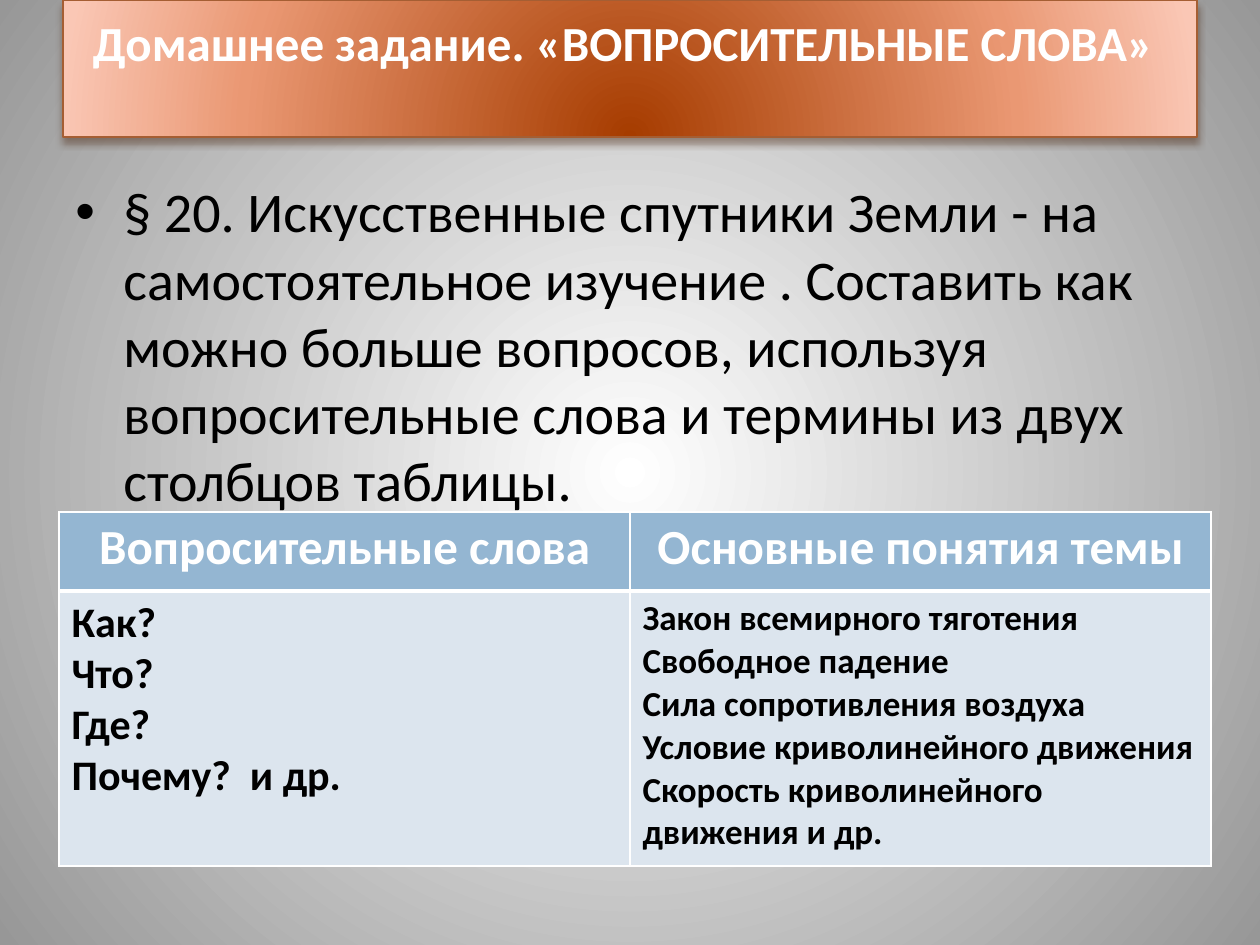
from lxml.etree import SubElement
from pptx import Presentation
from pptx.dml.color import RGBColor
from pptx.enum.shapes import MSO_SHAPE
from pptx.enum.text import MSO_ANCHOR, PP_ALIGN
from pptx.oxml import parse_xml
from pptx.oxml.ns import nsdecls, qn
from pptx.util import Emu, Pt

WHITE = RGBColor(0xFF, 0xFF, 0xFF)
BLACK = RGBColor(0x00, 0x00, 0x00)
GRAY = RGBColor(0x97, 0x97, 0x97)
RUST = RGBColor(0xA6, 0x3C, 0x00)
ORANGE = RGBColor(0xEA, 0x98, 0x73)
PEACH = RGBColor(0xFA, 0xC7, 0xB5)
BROWN = RGBColor(0xA5, 0x5E, 0x33)
SHADE = RGBColor(0x4F, 0x2D, 0x18)
BLUE = RGBColor(0x94, 0xB6, 0xD2)
PALE_BLUE = RGBColor(0xDC, 0xE5, 0xEE)

HEADING = {"size": Pt(28), "bold": True, "color": WHITE}
TASK = {"size": Pt(32), "bold": False, "color": BLACK}
QUESTIONS = {"size": Pt(24), "bold": True, "color": BLACK}
CONCEPTS = {"size": Pt(20), "bold": True, "color": BLACK}

COLUMNS = [
    ("Вопросительные слова", QUESTIONS,
     ["Как?", "Что?", "Где?", "Почему?  и др."]),
    ("Основные понятия темы", CONCEPTS,
     ["Закон всемирного тяготения", "Свободное падение",
      "Сила сопротивления воздуха", "Условие криволинейного движения",
      "Скорость криволинейного движения и др."]),
]


def px(length):
    """Turn slide pixels into EMU."""
    return Emu(round(length * 914400 / 126))


def set_attributes(target, values):
    """Set every attribute named in a dict."""
    for name, value in values.items():
        setattr(target, name, value)


def write_lines(frame, lines, style, align=PP_ALIGN.LEFT):
    """Fill a text frame with one styled paragraph per line."""
    for index, line in enumerate(lines):
        paragraph = frame.add_paragraph() if index else frame.paragraphs[0]
        paragraph.alignment = align
        run = paragraph.add_run()
        run.text = line
        set_attributes(run.font, {"name": "Calibri", "size": style["size"],
                                  "bold": style["bold"]})
        run.font.color.rgb = style["color"]


def fill_radial(fill, holder, stops, focus):
    """Give a holder element a circular gradient around a focus rectangle."""
    fill.solid()
    marks = "".join(
        f'<a:gs pos="{position * 1000}"><a:srgbClr val="{color}"/></a:gs>'
        for position, color in stops)
    sides = " ".join(f'{side}="{value * 1000}"' for side, value in zip("ltrb", focus))
    gradient = parse_xml(
        f'<a:gradFill {nsdecls("a")} rotWithShape="1"><a:gsLst>{marks}</a:gsLst>'
        f'<a:path path="circle"><a:fillToRect {sides}/></a:path></a:gradFill>')
    holder.replace(holder.find(qn("a:solidFill")), gradient)


def paint_background(slide):
    """Paint the white to gray glow behind the slide."""
    fill = slide.background.fill
    fill.solid()
    holder = next(slide.element.iter(qn("p:bgPr")))
    fill_radial(fill, holder, [(0, WHITE), (100, GRAY)], (50, 50, 50, 50))


def add_banner(slide, left, top, width, height):
    """Add the heading banner with its gradient and soft shadow."""
    banner = slide.shapes.add_shape(
        MSO_SHAPE.RECTANGLE, px(left), px(top), px(width), px(height))
    properties = banner.element.spPr
    fill_radial(banner.fill, properties, [(0, RUST), (68, ORANGE), (100, PEACH)],
                (50, 130, 50, -30))
    banner.line.color.rgb = BROWN
    banner.line.width = Pt(0.75)
    banner.shadow.inherit = False
    shadow = SubElement(properties.find(qn("a:effectLst")), qn("a:outerShdw"),
                        blurRad=str(Pt(4.5)), dist=str(Pt(3)),
                        dir="5400000", rotWithShape="0")
    color = SubElement(shadow, qn("a:srgbClr"), val=str(SHADE))
    SubElement(color, qn("a:alpha"), val="48000")
    frame = banner.text_frame
    set_attributes(frame, {"word_wrap": True, "vertical_anchor": MSO_ANCHOR.TOP,
                           "margin_left": px(6), "margin_right": px(20),
                           "margin_top": px(13)})
    write_lines(frame, ["Домашнее задание. «ВОПРОСИТЕЛЬНЫЕ СЛОВА»"],
                HEADING, PP_ALIGN.CENTER)


def add_task(slide, left, top, width, height):
    """Add the bulleted homework task."""
    task = slide.shapes.add_textbox(px(left), px(top), px(width), px(height))
    frame = task.text_frame
    set_attributes(frame, {"word_wrap": True, "margin_top": px(9)})
    write_lines(frame, [
        "§ 20. Искусственные спутники Земли - на самостоятельное изучение . "
        "Составить как можно больше вопросов, используя вопросительные слова "
        "и термины из двух столбцов таблицы."], TASK)
    layout = frame.paragraphs[0]._p.get_or_add_pPr()
    layout.set("marL", str(px(48)))
    layout.set("indent", str(px(-48)))
    SubElement(layout, qn("a:buFont"), typeface="Arial")
    SubElement(layout, qn("a:buChar"), char="•")


def style_cell(cell, color, top_width, bottom_width):
    """Fill a cell and draw its white borders."""
    cell.fill.solid()
    cell.fill.fore_color.rgb = color
    properties = cell._tc.get_or_add_tcPr()
    widths = {"L": 1, "R": 1, "T": top_width, "B": bottom_width}
    for index, (side, width) in enumerate(widths.items()):
        properties.insert(index, parse_xml(
            f'<a:ln{side} {nsdecls("a")} w="{Pt(width)}"><a:solidFill>'
            f'<a:srgbClr val="{WHITE}"/></a:solidFill></a:ln{side}>'))


def add_word_table(slide, left, top, widths, heights):
    """Add the table of question words and topic concepts."""
    table = slide.shapes.add_table(
        len(heights), len(widths), px(left), px(top),
        px(sum(widths)), px(sum(heights))).table
    table.horz_banding = False
    for row, height in zip(table.rows, heights):
        row.height = px(height)
    for index, (heading, style, words) in enumerate(COLUMNS):
        table.columns[index].width = px(widths[index])
        head, body = table.cell(0, index), table.cell(1, index)
        style_cell(head, BLUE, 1, 3)
        style_cell(body, PALE_BLUE, 3, 1)
        write_lines(head.text_frame, [heading], HEADING, PP_ALIGN.CENTER)
        write_lines(body.text_frame, words, style)


def main():
    """Build and save the homework slide."""
    deck = Presentation()
    set_attributes(deck, {"slide_width": px(1260), "slide_height": px(945)})
    slide = deck.slides.add_slide(deck.slide_layouts[6])
    paint_background(slide)
    add_banner(slide, 63, 0, 1134, 137)
    add_task(slide, 63, 168, 1134, 728)
    add_word_table(slide, 59, 512, [571, 581], [79, 275])
    deck.save("out.pptx")


if __name__ == "__main__":
    main()
